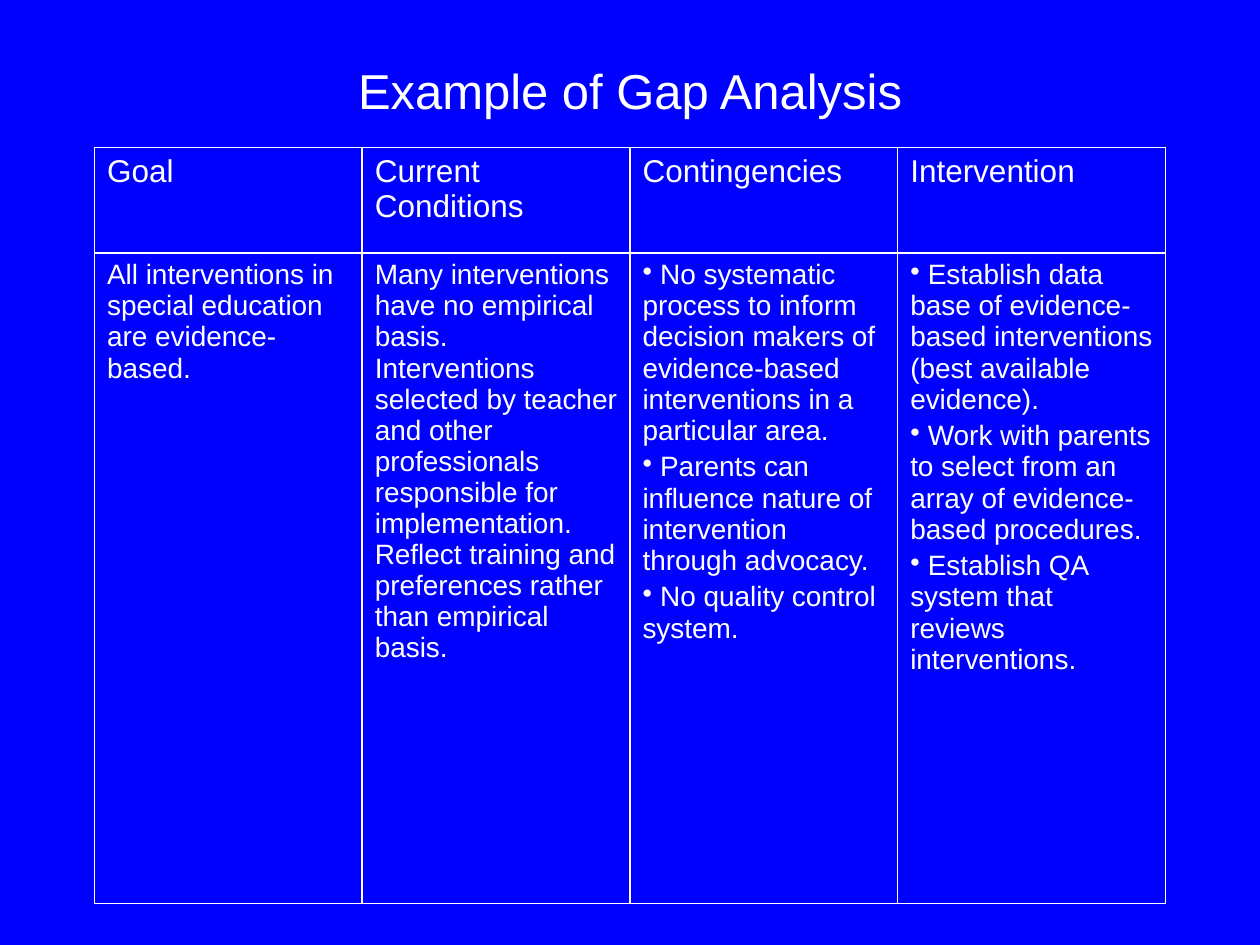
from lxml import etree
from pptx import Presentation
from pptx.dml.color import RGBColor
from pptx.enum.text import MSO_ANCHOR, PP_ALIGN
from pptx.oxml.ns import qn
from pptx.util import Inches, Pt

CENTER = PP_ALIGN.CENTER
MIDDLE = MSO_ANCHOR.MIDDLE
COLORS = {"background": "0000FF", "foreground": "FFFFFF"}
FONT = "Arial"

GAP_COLUMNS = [
    ("Goal", ["All interventions in special education are evidence-based."]),
    ("Current Conditions", [
        "Many interventions have no empirical basis.  Interventions selected by "
        "teacher and other professionals responsible for implementation.  Reflect "
        "training and preferences rather than empirical basis.",
    ]),
    ("Contingencies", [
        " No systematic process to inform decision makers of evidence-based "
        "interventions in a particular area.",
        " Parents can influence nature of intervention through advocacy.",
        " No quality control system.",
    ]),
    ("Intervention", [
        " Establish data base of evidence-based interventions "
        "(best available evidence).",
        " Work with parents to select from an array of evidence-based procedures.",
        " Establish QA system that reviews interventions.",
    ]),
]


def write_paragraphs(frame, texts, size):
    """Fill a text frame; several texts become a bulleted list."""
    frame.word_wrap = True
    for index, text in enumerate(texts):
        paragraph = frame.paragraphs[0] if index == 0 else frame.add_paragraph()
        paragraph.text = text
        if len(texts) > 1:
            properties = paragraph._p.get_or_add_pPr()
            etree.SubElement(properties, qn("a:buChar"), char="•")
        if index > 0:
            paragraph.space_before = Pt(3.2)
        paragraph.font.name = FONT
        paragraph.font.size = Pt(size)
        paragraph.font.bold = False
        paragraph.font.color.rgb = RGBColor.from_string(COLORS["foreground"])


def outline_cell(cell):
    properties = cell._tc.get_or_add_tcPr()
    for position, side in enumerate(("lnL", "lnR", "lnT", "lnB")):
        line = etree.Element(qn(f"a:{side}"), w=str(Pt(1)))
        fill = etree.SubElement(line, qn("a:solidFill"))
        etree.SubElement(fill, qn("a:srgbClr"), val=COLORS["foreground"])
        properties.insert(position, line)


presentation = Presentation()
presentation.slide_width = Inches(10)
presentation.slide_height = Inches(7.5)
slide = presentation.slides.add_slide(presentation.slide_layouts[6])
slide.background.fill.solid()
slide.background.fill.fore_color.rgb = RGBColor.from_string(COLORS["background"])

title = slide.shapes.add_textbox(Inches(0.75), Inches(0.17), Inches(8.5), Inches(1.08))
title.text_frame.vertical_anchor = MIDDLE
write_paragraphs(title.text_frame, ["Example of Gap Analysis"], 28)
title.text_frame.paragraphs[0].alignment = CENTER

gap_table = slide.shapes.add_table(
    2, len(GAP_COLUMNS), Inches(0.75), Inches(1.17), Inches(8.5), Inches(6)
).table
gap_table.first_row = False
gap_table.horz_banding = False
gap_table.rows[0].height = Inches(0.84)
gap_table.rows[1].height = Inches(5.16)

for column, (heading, entries) in enumerate(GAP_COLUMNS):
    for row, (texts, size) in enumerate([([heading], 18), (entries, 16)]):
        cell = gap_table.cell(row, column)
        cell.fill.background()
        outline_cell(cell)
        write_paragraphs(cell.text_frame, texts, size)

presentation.save("out.pptx")
